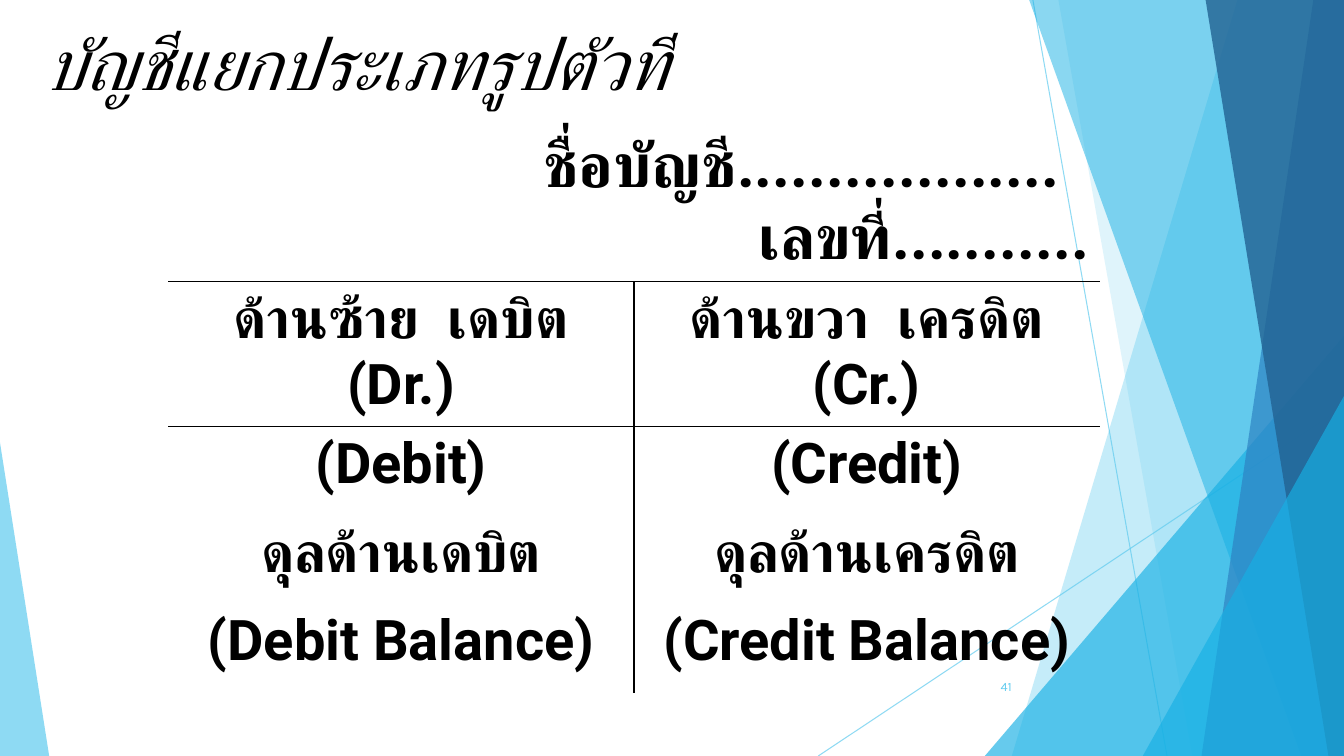
from lxml.etree import SubElement
from pptx import Presentation
from pptx.dml.color import RGBColor
from pptx.enum.shapes import MSO_CONNECTOR, MSO_SHAPE
from pptx.enum.text import MSO_ANCHOR, PP_ALIGN
from pptx.oxml.ns import qn
from pptx.util import Cm, Pt

SLIDE_WIDTH, SLIDE_HEIGHT = 33.87, 19.05
SKY, CYAN, BLUE, NAVY, BLACK = "5FCBEF", "17B0E4", "2E83C3", "226292", "000000"
NO_STYLE_NO_GRID = "{2D5ABB26-0587-4C30-8999-92F81FD0307C}"


def color(hex_string):
    return RGBColor.from_string(hex_string)


def set_opacity(color_parent, percent):
    """Add an opacity to the solid colour found below the given element."""
    color_element = next(color_parent.iter(qn("a:srgbClr")))
    SubElement(color_element, qn("a:alpha"), val=str(percent * 1000))


def paint(shape, hex_string, opacity):
    shape.shadow.inherit = False
    shape.fill.solid()
    shape.fill.fore_color.rgb = color(hex_string)
    set_opacity(shape.fill._xPr, opacity)
    shape.line.fill.background()


def format_runs(paragraph, size, hex_string=BLACK, font="Roboto", bold=False, italic=False):
    for run in paragraph.runs:
        run.font.size = Pt(size)
        run.font.name = font
        run.font.bold = bold
        run.font.italic = italic
        run.font.color.rgb = color(hex_string)
        # Thai letters take the complex-script font
        SubElement(run.font._element, qn("a:cs"), typeface=font)


def add_ray(slide, start, end):
    ray = slide.shapes.add_connector(MSO_CONNECTOR.STRAIGHT, *map(Cm, start + end))
    ray.line.color.rgb = color(SKY)
    ray.line.width = Pt(0.75)
    properties = ray._element.spPr
    set_opacity(properties, 70)
    SubElement(properties, qn("a:effectLst"))


def add_panel(slide, top_x, bottom_x, right, top, bottom, hex_string, opacity):
    """Slanted left edge, straight right edge."""
    builder = slide.shapes.build_freeform(Cm(top_x), Cm(top), scale=1.0)
    corners = [(right, top), (right, bottom), (bottom_x, bottom)]
    builder.add_line_segments([(Cm(x), Cm(y)) for x, y in corners], close=True)
    paint(builder.convert_to_shape(), hex_string, opacity)


def add_triangle(slide, left, top, right, bottom, apex, hex_string, opacity):
    triangle = slide.shapes.add_shape(
        MSO_SHAPE.ISOSCELES_TRIANGLE, Cm(left), Cm(top), Cm(right - left), Cm(bottom - top))
    triangle.adjustments[0] = apex
    paint(triangle, hex_string, opacity)


def add_facets(slide, left, top, width, height):
    """Translucent facets along both sides of the box."""
    right, bottom = left + width, top + height

    def panel(top_x, bottom_x, hex_string, opacity):
        add_panel(slide, left + top_x, left + bottom_x, right, top - 0.02, bottom,
                  hex_string, opacity)

    add_ray(slide, (left + 26.03, top), (left + 29.41, bottom))
    add_ray(slide, (right, top + 10.24), (left + 20.62, bottom))
    panel(31.19, 25.5, SKY, 36)
    panel(26.67, 30.05, SKY, 20)
    add_triangle(slide, left + 24.82, top + 8.46, right, bottom, 1, CYAN, 66)
    panel(25.93, 32.79, CYAN, 50)
    panel(33.1, 30.28, BLUE, 70)
    panel(30.38, 33.48, NAVY, 80)
    add_triangle(slide, left + 28.8, top + 9.98, right, bottom, 1, CYAN, 66)
    add_triangle(slide, left, top + 11.15, left + 1.24, bottom, 0, SKY, 70)


def add_text(slide, left, top, width, height, text, anchor, alignment, **style):
    box = slide.shapes.add_textbox(Cm(left), Cm(top), Cm(width), Cm(height))
    frame = box.text_frame
    frame.word_wrap = True
    frame.vertical_anchor = anchor
    frame.text = text
    frame.paragraphs[0].alignment = alignment
    format_runs(frame.paragraphs[0], **style)


def add_border(cell, side):
    line = SubElement(cell._tc.get_or_add_tcPr(), qn("a:" + side), w=str(Pt(1)))
    fill = SubElement(line, qn("a:solidFill"))
    SubElement(fill, qn("a:srgbClr"), val=BLACK)


def add_t_account(slide, left, top, width, height):
    sides = [
        ("ด้านซ้าย  เดบิต (Dr.)", "ด้านขวา  เครดิต (Cr.)"),
        ("(Debit)", "(Credit)"),
        ("ดุลด้านเดบิต", "ดุลด้านเครดิต"),
        ("(Debit Balance)", "(Credit Balance)"),
    ]
    table = slide.shapes.add_table(
        len(sides) + 1, 2, Cm(left), Cm(top), Cm(width), Cm(height)).table
    table.first_row = table.horz_banding = False
    table._tbl.tblPr.find(qn("a:tableStyleId")).text = NO_STYLE_NO_GRID
    row_height = 2.24
    for row in table.rows:
        row.height = Cm(row_height)
    table.rows[0].height = Cm(height - len(sides) * row_height)

    # Account name and number across the top
    heading = table.cell(0, 0)
    heading.merge(table.cell(0, 1))
    heading.vertical_anchor = MSO_ANCHOR.MIDDLE
    heading.text_frame.text = "ชื่อบัญชี..................\nเลขที่..........."
    name, number = heading.text_frame.paragraphs
    name._p.get_or_add_pPr().set("marL", str(Cm(9.2)))
    number.alignment = PP_ALIGN.RIGHT
    for paragraph in (name, number):
        format_runs(paragraph, 44, bold=True)

    # Debit on the left, credit on the right
    for row_index, texts in enumerate(sides, start=1):
        for column_index, text in enumerate(texts):
            cell = table.cell(row_index, column_index)
            cell.text_frame.text = text
            paragraph = cell.text_frame.paragraphs[0]
            paragraph.alignment = PP_ALIGN.CENTER
            format_runs(paragraph, 40, bold=True)

    # The T: a bar under the heading and a stem between the sides
    for row_index in range(len(sides) + 1):
        for column_index in range(2):
            cell = table.cell(row_index, column_index)
            if row_index > 0:
                add_border(cell, "lnR" if column_index == 0 else "lnL")
            if row_index == 1:
                add_border(cell, "lnT")
            if row_index == 0:
                add_border(cell, "lnB")
            cell.fill.background()


def main():
    presentation = Presentation()
    presentation.slide_width = Cm(SLIDE_WIDTH)
    presentation.slide_height = Cm(SLIDE_HEIGHT)
    slide = presentation.slides.add_slide(presentation.slide_layouts[6])

    add_facets(slide, 0, 0, SLIDE_WIDTH, SLIDE_HEIGHT)
    add_text(slide, 0.91, 0.36, 25.4, 4.32, "บัญชีแยกประเภทรูปตัวที",
             MSO_ANCHOR.TOP, PP_ALIGN.LEFT, size=51, italic=True)
    add_t_account(slide, 4.24, 3.12, 23.47, 11.35)
    add_text(slide, 23.85, 16.79, 1.9, 1.02, "41",
             MSO_ANCHOR.MIDDLE, PP_ALIGN.RIGHT, size=9, hex_string=SKY, font="Karla")
    presentation.save("out.pptx")


if __name__ == "__main__":
    main()
